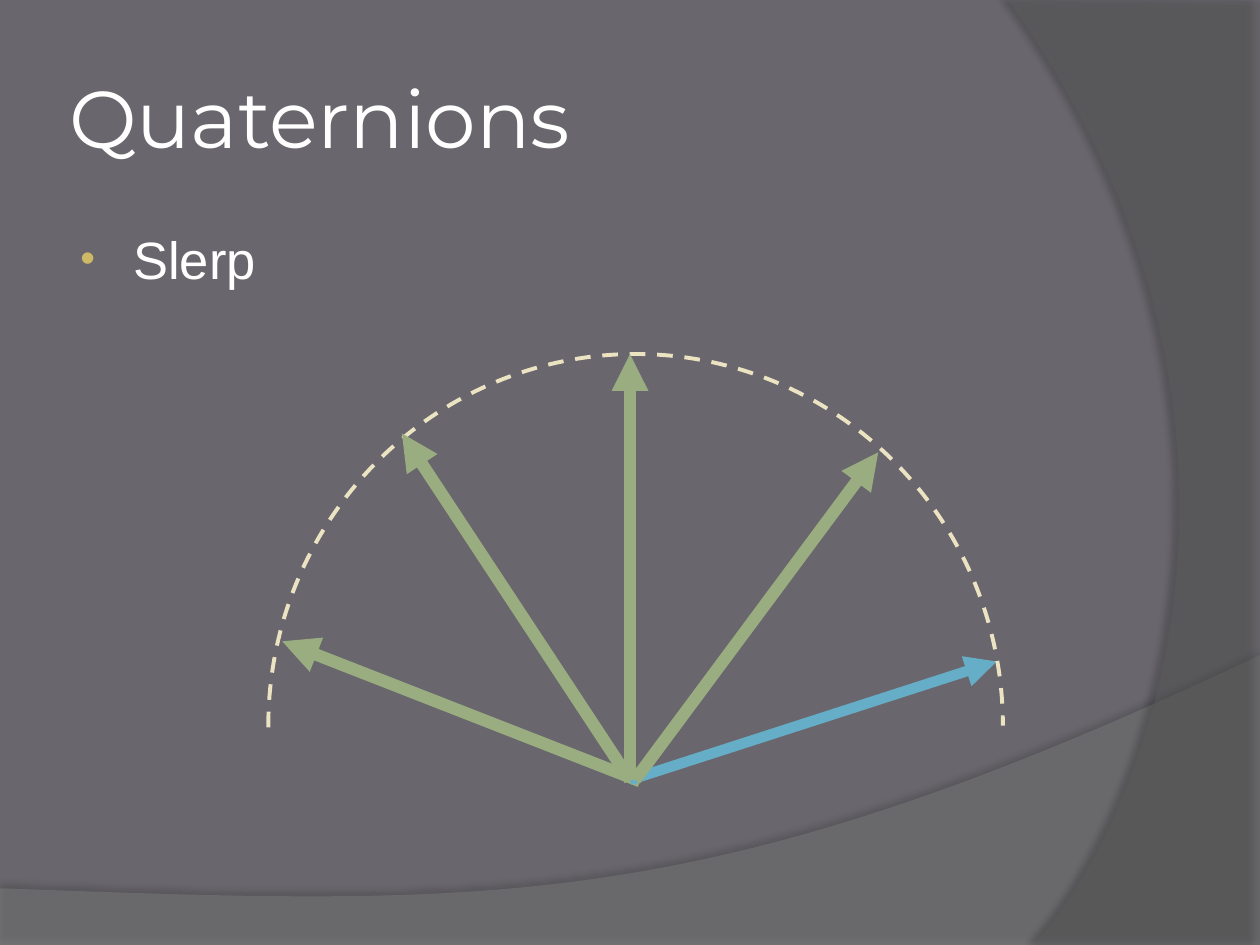
import pptx
import pptx.util
import pptx.dml.color
import pptx.enum.dml
import pptx.enum.shapes
import pptx.enum.text
import pptx.oxml.ns
import lxml.etree

Inches = pptx.util.Inches
Pt = pptx.util.Pt
qn = pptx.oxml.ns.qn

COLORS = {
    "background": "69676D",
    "wave": "7F7F7F",
    "side": "5E5E5E",
    "shadow": "000000",
    "text": "FFFFFF",
    "bullet": "CEB966",
    "green": "99AD80",
    "blue": "66AEC7",
    "cream": "EBE3C2",
}


def rgb(name):
    return pptx.dml.color.RGBColor.from_string(COLORS[name])


def sub(parent, tag, **attrs):
    values = {key: str(value) for key, value in attrs.items()}
    return lxml.etree.SubElement(parent, qn(tag), values)


def bezier(p0, p1, p2, p3, steps=60):
    points = []
    for i in range(1, steps + 1):
        t = i / steps
        weights = ((1 - t) ** 3, 3 * t * (1 - t) ** 2, 3 * t * t * (1 - t), t ** 3)
        points.append(tuple(sum(w * p[axis] for w, p in zip(weights, (p0, p1, p2, p3)))
                            for axis in (0, 1)))
    return points


def write(p, text, size=30, font="Arial", color="text"):
    r = p.add_run()
    r.text = text
    r.font.size = Pt(size)
    r.font.name = font
    r.font.color.rgb = rgb(color)
    return r


class Deck:
    def __init__(self, width, height):
        self.prs = pptx.Presentation()
        self.prs.slide_width = Inches(width)
        self.prs.slide_height = Inches(height)
        self.s = None

    def slide(self):
        self.s = self.prs.slides.add_slide(self.prs.slide_layouts[6])
        self.s.background.fill.solid()
        self.s.background.fill.fore_color.rgb = rgb("background")

    def panel(self, points, color, opacity, shadow_opacity, distance, angle):
        points = [(Inches(x), Inches(y)) for x, y in points]
        builder = self.s.shapes.build_freeform(*points[0])
        builder.add_line_segments(points[1:], close=True)
        sp = builder.convert_to_shape()
        sp.line.fill.background()
        sp.fill.solid()
        sp.fill.fore_color.rgb = rgb(color)
        fill = sp._element.spPr.find(qn("a:solidFill"))
        sub(fill[0], "a:alpha", val=opacity * 1000)
        sp.shadow.inherit = False
        effects = sp._element.spPr.find(qn("a:effectLst"))
        shadow = sub(effects, "a:outerShdw", blurRad=Pt(4), dist=Pt(distance),
                     dir=angle * 60000, algn="ctr", rotWithShape=0)
        shade = sub(shadow, "a:srgbClr", val=COLORS["shadow"])
        sub(shade, "a:alpha", val=shadow_opacity * 1000)

    def textbox(self, x, y, w, h):
        sp = self.s.shapes.add_textbox(Inches(x), Inches(y), Inches(w), Inches(h))
        sp.text_frame.word_wrap = True
        return sp.text_frame

    def title(self, text, x, y, w, h):
        tf = self.textbox(x, y, w, h)
        tf.vertical_anchor = pptx.enum.text.MSO_ANCHOR.MIDDLE
        tf.margin_left = tf.margin_right = Inches(0.05)
        write(tf.paragraphs[0], text, size=46, font="Montserrat")

    def bullet(self, text, x, y, w, h):
        p = self.textbox(x, y, w, h).paragraphs[0]
        p.space_before = Pt(6)
        pPr = p._p.get_or_add_pPr()
        pPr.set("marL", str(Inches(0.46)))
        pPr.set("indent", str(Inches(-0.42)))
        sub(sub(pPr, "a:buClr"), "a:srgbClr", val=COLORS["bullet"])
        sub(pPr, "a:buSzPct", val=80000)
        sub(pPr, "a:buFont", typeface="Arial")
        sub(pPr, "a:buChar", char="•")
        write(p, text)

    def arrow(self, start, end, color="green", width=7):
        line = self.s.shapes.add_connector(
            pptx.enum.shapes.MSO_CONNECTOR.STRAIGHT,
            *(Inches(v) for v in (*start, *end)))
        line.line.color.rgb = rgb(color)
        line.line.width = Pt(width)
        sub(line.line._get_or_add_ln(), "a:tailEnd", type="triangle")
        sub(line._element.spPr, "a:effectLst")

    def arc(self, x, y, w, h):
        sp = self.s.shapes.add_shape(pptx.enum.shapes.MSO_SHAPE.ARC,
                                     Inches(x), Inches(y), Inches(w), Inches(h))
        sp.adjustments[0] = 107.85
        sp.adjustments[1] = 0
        sp.shadow.inherit = False
        sp.fill.background()
        sp.line.color.rgb = rgb("cream")
        sp.line.width = Pt(2.25)
        sp.line.dash_style = pptx.enum.dml.MSO_LINE.DASH


def main():
    deck = Deck(10, 7.5)
    deck.slide()

    wave = [(0, 7.05), (0, 7.51), (10, 7.51), (10, 5.2)]
    wave += bezier((10, 5.2), (5.59, 7.29), (3.91, 7.19), (0, 7.05))
    deck.panel(wave, "wave", 45, shadow_opacity=35, distance=3.5, angle=270)

    side = [(10, 0.02), (10, 7.5), (8.21, 7.5)]
    side += bezier((8.21, 7.5), (9.35, 6.19), (10.18, 3), (8, 0))
    deck.panel(side, "side", 40, shadow_opacity=45, distance=4, angle=180)

    deck.title("Quaternions", 0.5, 0.3, 8.17, 1.25)
    deck.bullet("Slerp", 0.5, 1.75, 8.17, 0.82)

    origin = (5, 6.19)
    deck.arrow((5.08, 6.2), (2.24, 5.09))
    deck.arrow(origin, (7.91, 5.25), color="blue", width=6)
    deck.arc(2.13, 2.81, 5.83, 5.9)
    for start, tip in ((origin, (3.19, 3.44)), (origin, (5, 2.81)),
                       ((5.04, 6.19), (6.97, 3.59))):
        deck.arrow(start, tip)

    deck.prs.save("out.pptx")


if __name__ == "__main__":
    main()
